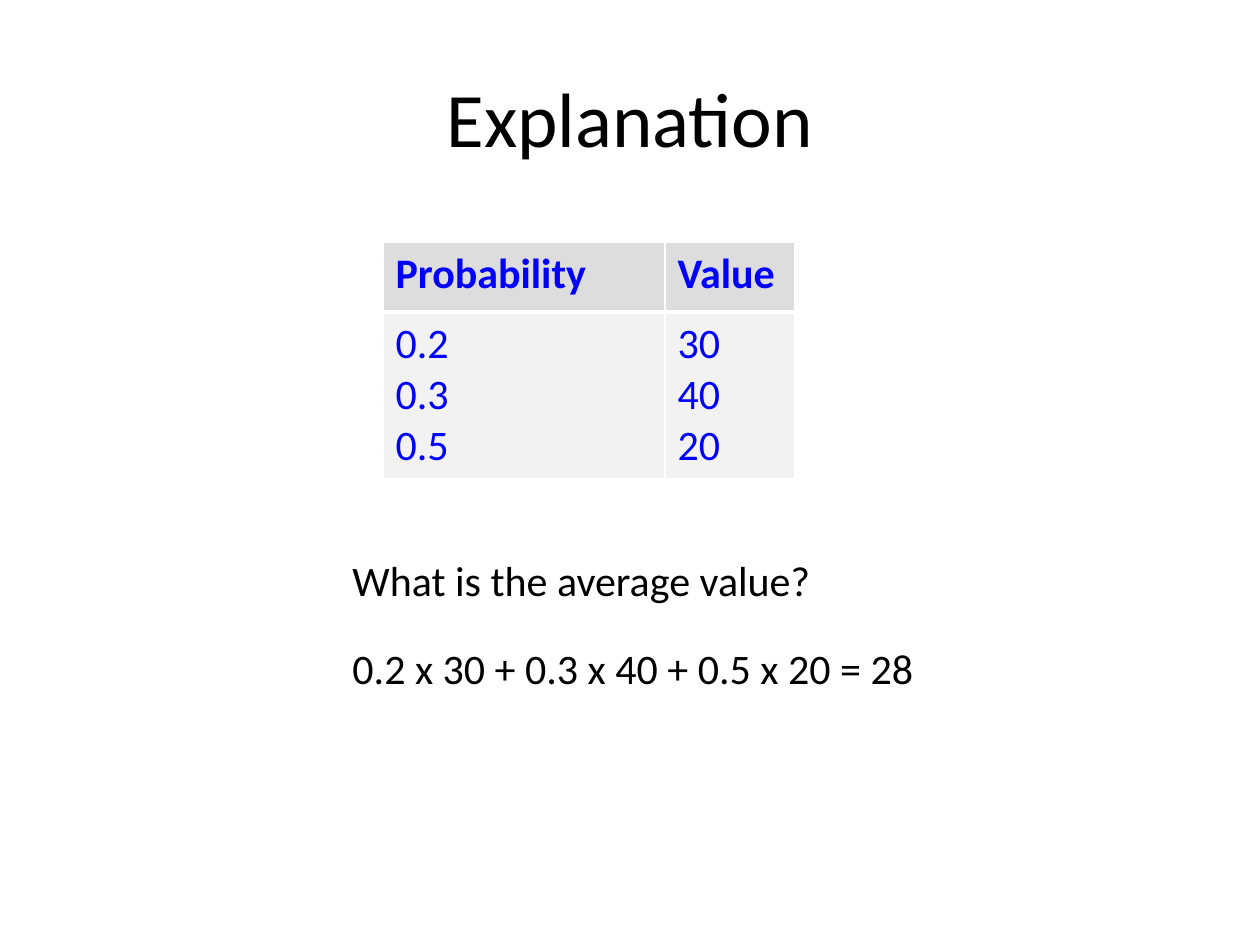
"""Build the expected-value explanation slide."""
import dataclasses

import lxml.etree
import pptx
import pptx.dml.color
import pptx.enum.text
import pptx.oxml.ns
import pptx.util

PX_PER_INCH = 126
FONT = "Calibri"
BLACK, BLUE, WHITE = "000000", "0000FF", "FFFFFF"
ALIGN = pptx.enum.text.PP_ALIGN
ANCHOR = pptx.enum.text.MSO_ANCHOR


@dataclasses.dataclass(frozen=True)
class Statement:
    text: str
    top: int
    width: int
    wrap: bool


@dataclasses.dataclass(frozen=True)
class TableRow:
    cells: tuple[str, ...]
    height: int
    fill: str
    bold: bool
    bottom_line: int


STATEMENTS = (
    Statement("What is the average value?", 548, 488, False),
    Statement("0.2 x 30 + 0.3 x 40 + 0.5 x 20 = 28", 636, 611, True),
)
COLUMN_WIDTHS = (282, 130)
ROWS = (
    TableRow(("Probability", "Value"), 70, "DDDDDD", True, 3),
    TableRow(("0.2\n0.3\n0.5", "30\n40\n20"), 164, "F2F2F2", False, 1),
)


def px(length: int) -> pptx.util.Emu:
    return pptx.util.Emu(round(length * 914400 / PX_PER_INCH))


def rgb(value: str) -> pptx.dml.color.RGBColor:
    return pptx.dml.color.RGBColor.from_string(value)


def write(frame, text: str, *, size: int = 24, color: str = BLACK,
          bold: bool = False, align=ALIGN.LEFT) -> None:
    frame.text = text
    for paragraph in frame.paragraphs:
        paragraph.alignment = align
        for run in paragraph.runs:
            run.font.name = FONT
            run.font.size = pptx.util.Pt(size)
            run.font.bold = bold
            run.font.color.rgb = rgb(color)


def add_borders(cell, bottom: int) -> None:
    properties = cell._tc.get_or_add_tcPr()
    qn = pptx.oxml.ns.qn
    for side, width in (("L", 1), ("R", 1), ("T", 1), ("B", bottom)):
        line = lxml.etree.SubElement(properties, qn(f"a:ln{side}"), w=str(pptx.util.Pt(width)))
        fill = lxml.etree.SubElement(line, qn("a:solidFill"))
        lxml.etree.SubElement(fill, qn("a:srgbClr"), val=WHITE)


def add_title(slide, text: str) -> None:
    title = slide.shapes.title
    title.left, title.top, title.width, title.height = map(px, (63, 38, 1134, 157))
    title.text_frame.vertical_anchor = ANCHOR.MIDDLE
    write(title.text_frame, text, size=44, align=ALIGN.CENTER)


def add_probability_table(slide, rows: tuple[TableRow, ...]) -> None:
    width, height = sum(COLUMN_WIDTHS), sum(row.height for row in rows)
    table = slide.shapes.add_table(
        len(rows), len(COLUMN_WIDTHS), px(383), px(242), px(width), px(height)).table
    for column, column_width in zip(table.columns, COLUMN_WIDTHS):
        column.width = px(column_width)
    for table_row, row in zip(table.rows, rows):
        table_row.height = px(row.height)
        for cell, text in zip(table_row.cells, row.cells):
            write(cell.text_frame, text, color=BLUE, bold=row.bold)
            add_borders(cell, row.bottom_line)
            cell.fill.solid()
            cell.fill.fore_color.rgb = rgb(row.fill)


def add_statement(slide, statement: Statement) -> None:
    box = slide.shapes.add_textbox(
        px(340), px(statement.top), px(statement.width), px(63))
    box.text_frame.word_wrap = statement.wrap
    box.text_frame.auto_size = pptx.enum.text.MSO_AUTO_SIZE.SHAPE_TO_FIT_TEXT
    write(box.text_frame, statement.text)


def main() -> None:
    presentation = pptx.Presentation()
    presentation.slide_width, presentation.slide_height = px(1260), px(945)
    slide = presentation.slides.add_slide(presentation.slide_layouts[5])
    add_title(slide, "Explanation")
    add_probability_table(slide, ROWS)
    for statement in STATEMENTS:
        add_statement(slide, statement)
    presentation.save("out.pptx")


if __name__ == "__main__":
    main()
